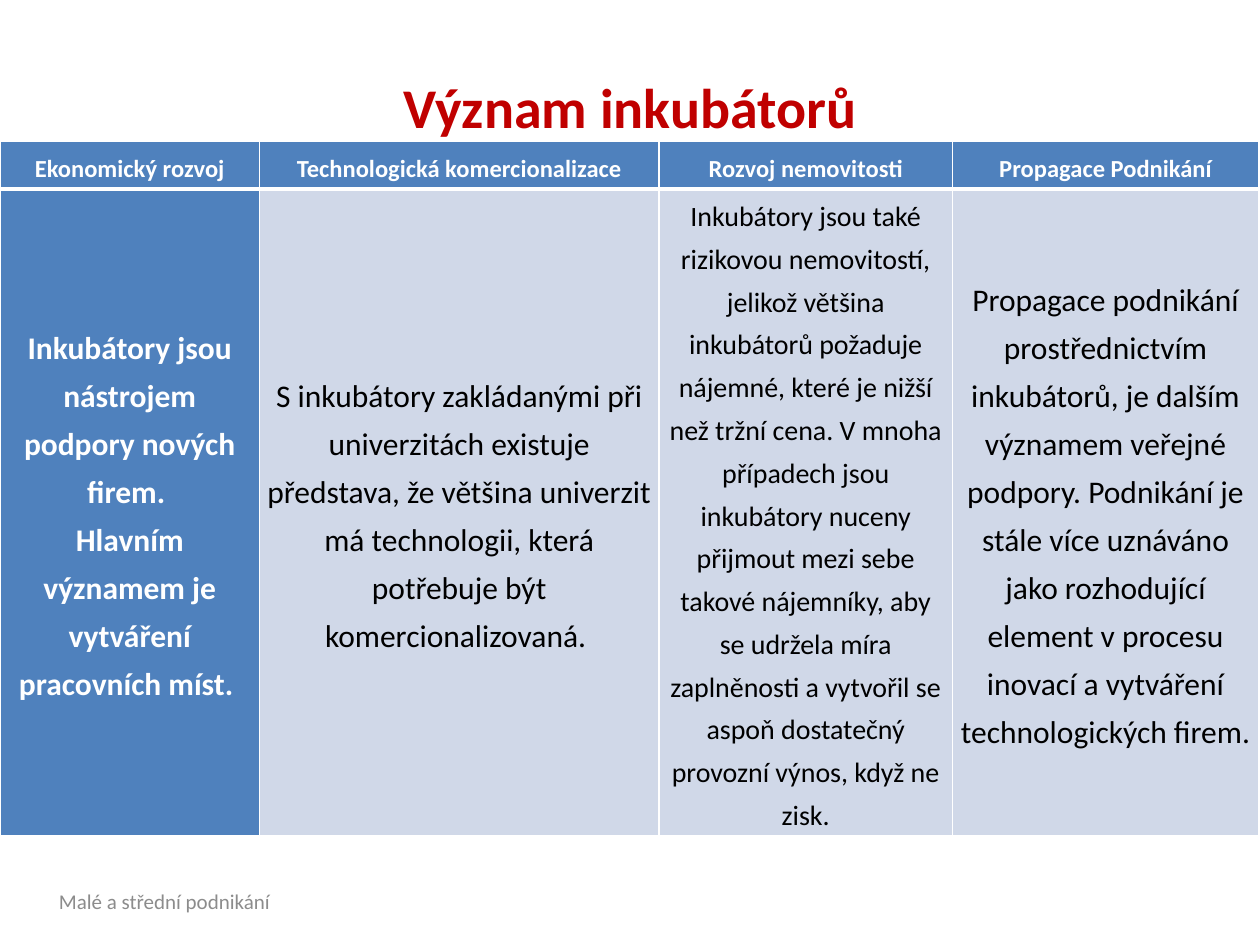
import lxml.etree
import pptx
import pptx.dml.color
import pptx.enum.text
import pptx.oxml.ns
import pptx.util
from pptx.util import Inches

ALIGN = pptx.enum.text.PP_ALIGN
MIDDLE = pptx.enum.text.MSO_ANCHOR.MIDDLE
BLUE, PALE, WHITE, BLACK = "4F81BD", "D0D8E8", "FFFFFF", "000000"


def color(value):
    return pptx.dml.color.RGBColor.from_string(value)


def write(frame, text, size, ink, bold=False, align=ALIGN.CENTER, spacing=None):
    """Fill a text frame, one paragraph for each line of text."""
    frame.word_wrap = True
    for number, line in enumerate(text.split("\n")):
        para = frame.paragraphs[0] if number == 0 else frame.add_paragraph()
        para.alignment = align
        para.line_spacing = spacing
        span = para.add_run()
        span.text = line
        span.font.name = "Calibri"
        span.font.size = pptx.util.Pt(size)
        span.font.bold = bold
        span.font.color.rgb = color(ink)


deck = pptx.Presentation()
deck.slide_width, deck.slide_height = Inches(10), Inches(7.5)
page = deck.slides.add_slide(deck.slide_layouts[5])

# Title
title = page.shapes.title
title.left, title.top, title.width, title.height = (
    Inches(0), Inches(0.39), Inches(10), Inches(0.91))
title.text_frame.vertical_anchor = MIDDLE
write(title.text_frame, "Význam inkubátorů", 32, "C00000", bold=True)

# Footer
footer = page.shapes.add_textbox(Inches(0.37), Inches(6.95), Inches(3.17), Inches(0.4))
footer.text_frame.vertical_anchor = MIDDLE
write(footer.text_frame, "Malé a střední podnikání", 12, "8C8C8C", align=ALIGN.LEFT)

# Table content: column width, heading, body text, body size
columns = [
    (2.06, "Ekonomický rozvoj",
     "Inkubátory jsou nástrojem podpory nových firem. \n"
     "Hlavním významem je vytváření pracovních míst. ", 18),
    (3.17, "Technologická komercionalizace",
     "S inkubátory zakládanými při univerzitách existuje představa, že většina "
     "univerzit má technologii, která potřebuje být komercionalizovaná. ", 18),
    (2.33, "Rozvoj nemovitosti",
     "Inkubátory jsou také rizikovou nemovitostí, jelikož většina inkubátorů "
     "požaduje nájemné, které je nižší než tržní cena. V mnoha případech jsou "
     "inkubátory nuceny přijmout mezi sebe takové nájemníky, aby se udržela míra "
     "zaplněnosti a vytvořil se aspoň dostatečný provozní výnos, když ne zisk.", 16),
    (2.43, "Propagace Podnikání",
     "Propagace podnikání prostřednictvím inkubátorů, je dalším významem veřejné "
     "podpory. Podnikání je stále více uznáváno jako rozhodující element v procesu "
     "inovací a vytváření technologických firem.", 18),
]
table = page.shapes.add_table(
    2, len(columns), Inches(0), Inches(1.12), Inches(10), Inches(5.51)).table
table.first_col = True
table.horz_banding = False
table.rows[0].height, table.rows[1].height = Inches(0.38), Inches(5.13)

for col, (width, heading, body, body_size) in enumerate(columns):
    table.columns[col].width = Inches(width)
    for row, (text, size) in enumerate([(heading, 14), (body, body_size)]):
        cell = table.cell(row, col)
        accent = row == 0 or col == 0
        cell.margin_left = cell.margin_right = Inches(0.05)
        cell.margin_top = cell.margin_bottom = Inches(0)
        cell.vertical_anchor = MIDDLE
        write(cell.text_frame, text, size, WHITE if accent else BLACK,
              bold=accent, spacing=1.25)

        # White borders, thicker between heading and body
        properties = cell._tc.get_or_add_tcPr()
        for side in ("lnL", "lnR", "lnT", "lnB"):
            thick = side == ("lnB" if row == 0 else "lnT")
            line = lxml.etree.SubElement(
                properties, pptx.oxml.ns.qn("a:" + side),
                w=str(pptx.util.Pt(3 if thick else 1)))
            fill = lxml.etree.SubElement(line, pptx.oxml.ns.qn("a:solidFill"))
            lxml.etree.SubElement(fill, pptx.oxml.ns.qn("a:srgbClr"), val=WHITE)
        cell.fill.solid()
        cell.fill.fore_color.rgb = color(BLUE if accent else PALE)

deck.save("out.pptx")
